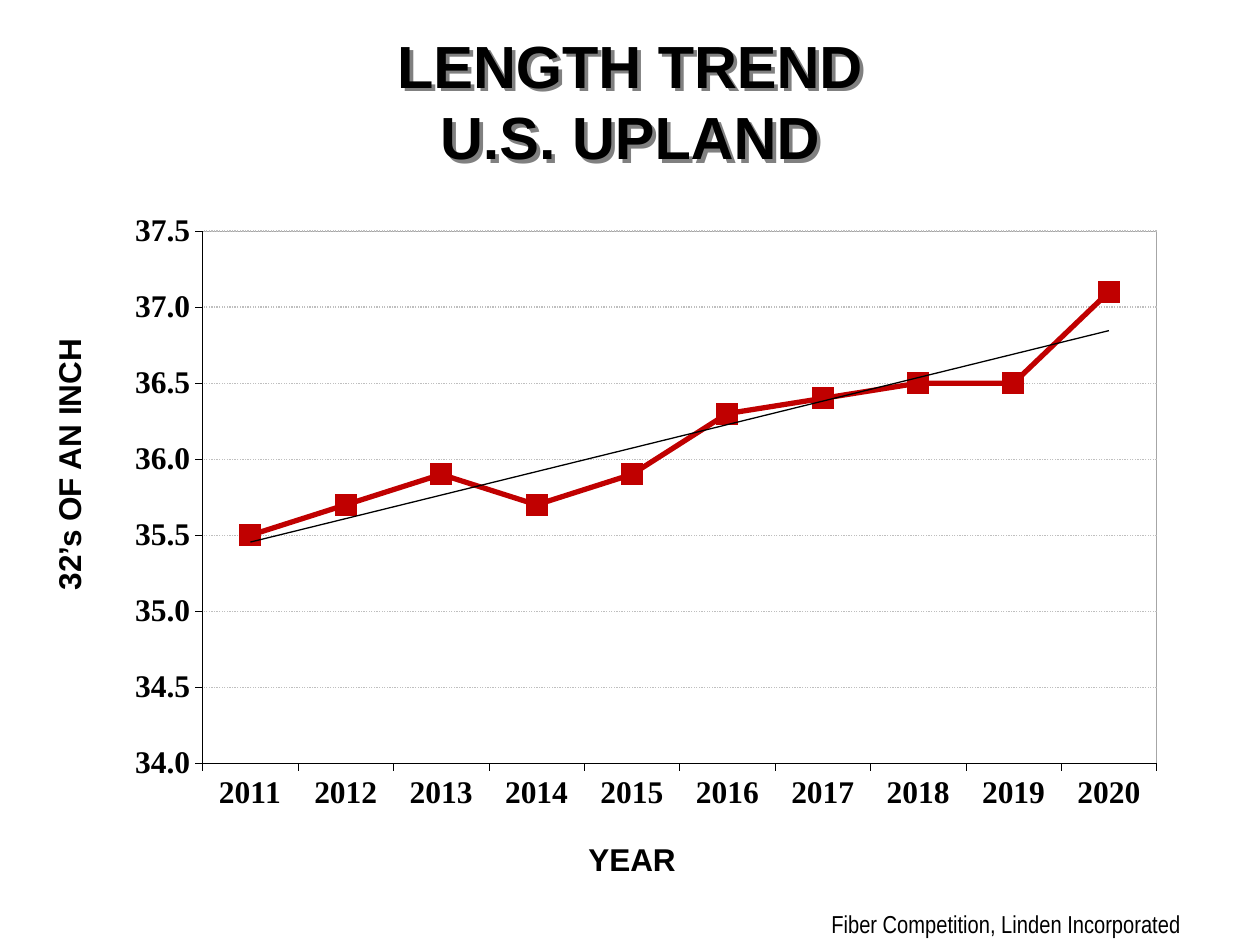
from pptx import Presentation
from pptx.chart.data import CategoryChartData
from pptx.dml.color import RGBColor
from pptx.enum.chart import XL_CHART_TYPE, XL_MARKER_STYLE, XL_TICK_MARK
from pptx.enum.dml import MSO_LINE
from pptx.enum.text import MSO_ANCHOR, MSO_AUTO_SIZE, PP_ALIGN
from pptx.oxml import parse_xml
from pptx.oxml.ns import nsdecls, qn
from pptx.util import Cm, Pt

LINE = XL_CHART_TYPE.LINE_MARKERS
SQUARE = XL_MARKER_STYLE.SQUARE
OUT = XL_TICK_MARK.OUTSIDE
DOTS = MSO_LINE.ROUND_DOT
MIDDLE = MSO_ANCHOR.MIDDLE
GROW = MSO_AUTO_SIZE.SHAPE_TO_FIT_TEXT
CENTER = PP_ALIGN.CENTER

# Content
TITLE = "LENGTH TREND\vU.S. UPLAND"
Y_NAME = "32’s OF AN INCH"
X_NAME = "YEAR"
SOURCE = "Fiber Competition, Linden Incorporated"
YEARS = [str(year) for year in range(2011, 2021)]
LENGTHS = [35.5, 35.7, 35.9, 35.7, 35.9, 36.3, 36.4, 36.5, 36.5, 37.1]
PLOT = {"x": 0.141, "y": 0.221, "w": 0.803, "h": 0.616}

THEME = {
    "ink": "000000", "red": "C00000", "grid": "BFBFBF", "edge": "A6A6A6",
    "shade": "808080",
    "head": ("Arial", 34, True), "name": ("Arial", 18, True),
    "note": ("Arial Narrow", 14, False), "tick": ("Times New Roman", 18, True),
}


def color(key):
    return RGBColor.from_string(THEME[key])


def style(font, key):
    font.name, size, font.bold = THEME[key]
    font.size = Pt(size)
    font.color.rgb = color("ink")


def add_text(slide, text, key, area, tight=False):
    box = slide.shapes.add_textbox(*map(Cm, area))
    frame = box.text_frame
    frame.word_wrap = not tight
    if tight:
        frame.auto_size = GROW
        frame.margin_left = frame.margin_right = 0
        frame.margin_top = frame.margin_bottom = 0
    frame.text = text
    for run in frame.paragraphs[0].runs:
        style(run.font, key)
    return box


def add_title(slide):
    box = add_text(slide, TITLE, "head", (1.9, 0.43, 21.6, 3.18))
    box.text_frame.vertical_anchor = MIDDLE
    para = box.text_frame.paragraphs[0]
    para.alignment = CENTER
    para.line_spacing = Pt(41)
    # With no fill on the box, its shadow falls from the letters
    box._element.spPr.append(parse_xml(
        f'<a:effectLst {nsdecls("a")}><a:outerShdw dist="{Pt(3)}" dir="2700000">'
        f'<a:srgbClr val="{THEME["shade"]}"/></a:outerShdw></a:effectLst>'))


def line_xml(key, width):
    return (f'<c:spPr {nsdecls("c", "a")}><a:ln w="{Pt(width)}"><a:solidFill>'
            f'<a:srgbClr val="{THEME[key]}"/></a:solidFill></a:ln></c:spPr>')


def set_plot(chart):
    area = chart._chartSpace.chart.plotArea
    for old in area.findall(qn("c:layout")):
        area.remove(old)
    spots = "".join(f'<c:{k} val="{v}"/>' for k, v in PLOT.items())
    area.insert(0, parse_xml(
        f'<c:layout {nsdecls("c")}><c:manualLayout><c:layoutTarget val="inner"/>'
        f'<c:xMode val="edge"/><c:yMode val="edge"/>{spots}'
        '</c:manualLayout></c:layout>'))
    area.append(parse_xml(line_xml("edge", 0.75)))


def add_trend(series):
    series._element.find(qn("c:cat")).addprevious(parse_xml(
        f'<c:trendline {nsdecls("c")}>{line_xml("ink", 0.75)}'
        '<c:trendlineType val="linear"/><c:dispRSqr val="0"/>'
        '<c:dispEq val="0"/></c:trendline>'))


def add_graph(slide):
    data = CategoryChartData()
    data.categories = YEARS
    data.add_series("Series 1", LENGTHS)
    area = map(Cm, (0.71, 0.81, 23.95, 17.42))
    chart = slide.shapes.add_chart(LINE, *area, data).chart
    chart.has_title = chart.has_legend = False
    style(chart.font, "tick")
    set_plot(chart)

    # Axes
    years, scale = chart.category_axis, chart.value_axis
    for axis in (years, scale):
        axis.major_tick_mark = OUT
        style(axis.tick_labels.font, "tick")
        axis.format.line.color.rgb = color("ink")
        axis.format.line.width = Pt(0.25)
    scale.minimum_scale, scale.maximum_scale, scale.major_unit = 34, 37.5, 0.5
    scale.tick_labels.number_format = "0.0"
    scale.tick_labels.number_format_is_linked = False
    grid = scale.major_gridlines.format.line
    grid.color.rgb = color("grid")
    grid.width = Pt(0.75)
    grid.dash_style = DOTS

    # Series
    chart.plots[0].vary_by_categories = False
    series = chart.plots[0].series[0]
    series.smooth = False
    series.format.line.color.rgb = color("red")
    series.format.line.width = Pt(3)
    mark = series.marker
    mark.style, mark.size = SQUARE, 12
    mark.format.fill.solid()
    mark.format.fill.fore_color.rgb = color("red")
    mark.format.line.color.rgb = color("red")
    add_trend(series)


def main():
    deck = Presentation()
    deck.slide_width, deck.slide_height = Cm(25.4), Cm(19.05)
    slide = deck.slides.add_slide(deck.slide_layouts[6])
    add_title(slide)
    # Axis names and source note
    side = add_text(slide, Y_NAME, "name", (-1.17, 8.97, 5.1, 0.76), tight=True)
    side.rotation = 270
    add_text(slide, X_NAME, "name", (11.86, 16.94, 1.8, 0.76), tight=True)
    add_text(slide, SOURCE, "note", (16.51, 18.21, 8.89, 0.84))
    add_graph(slide)
    deck.save("out.pptx")


if __name__ == "__main__":
    main()
